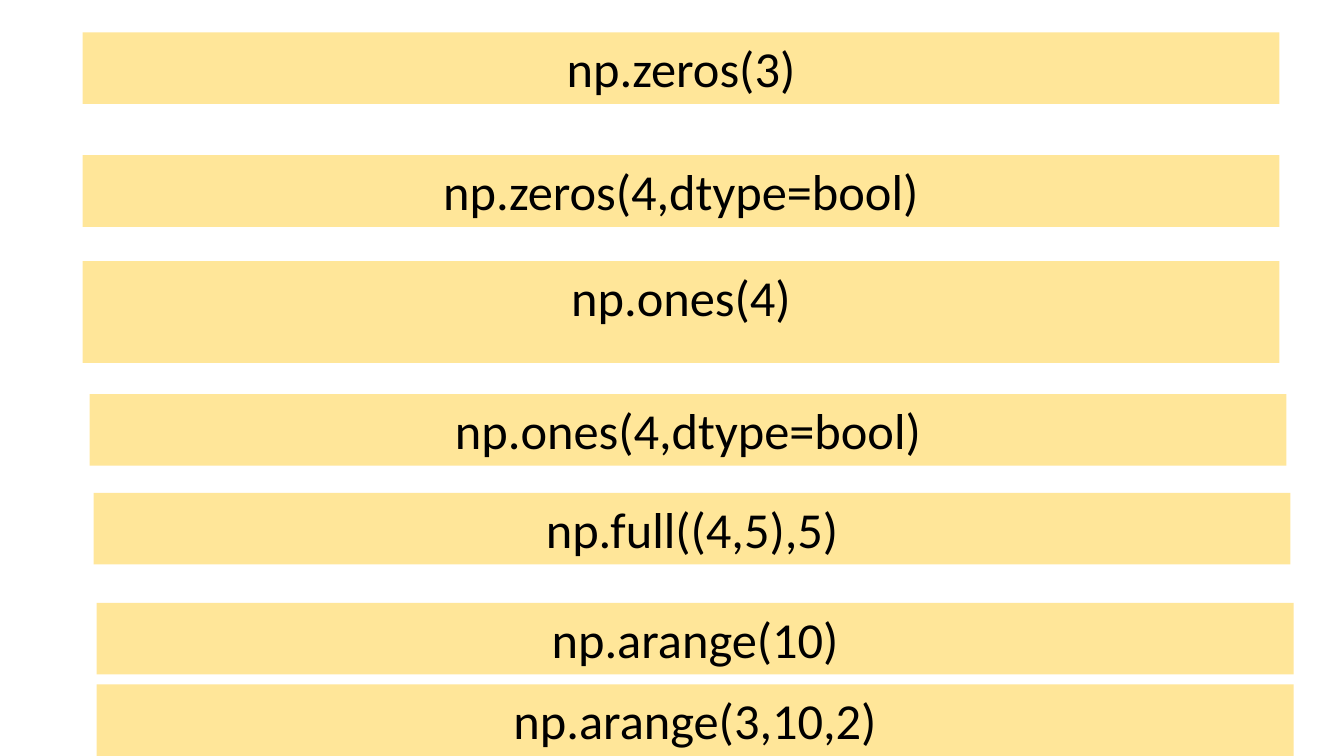
from pptx import Presentation
from pptx.dml.color import RGBColor
from pptx.enum.text import MSO_ANCHOR, MSO_AUTO_SIZE, PP_ALIGN
from pptx.util import Inches, Pt

SLIDE_W, SLIDE_H = 13.33, 7.5
BAR_W, BAR_H, TALL_BAR_H = 11.87, 0.71, 1.01
BAR_FILL, TEXT_COLOUR = "FFE699", "000000"
FRAME_FORMAT = {
    "word_wrap": True,
    "auto_size": MSO_AUTO_SIZE.NONE,
    "vertical_anchor": MSO_ANCHOR.TOP,
}
FONT_FORMAT = {"name": "Calibri", "size": Pt(36)}

NUMPY_CALLS = [
    ("np.zeros(3)", 0.82, 0.32, BAR_H),
    ("np.zeros(4,dtype=bool)", 0.82, 1.54, BAR_H),
    ("np.ones(4)", 0.82, 2.59, TALL_BAR_H),
    ("np.ones(4,dtype=bool)", 0.89, 3.91, BAR_H),
    ("np.full((4,5),5)", 0.93, 4.89, BAR_H),
    ("np.arange(10)", 0.96, 5.98, BAR_H),
    ("np.arange(3,10,2)", 0.96, 6.79, BAR_H),
]


def paint(colour_format, hex_colour):
    """Set a colour from a hex string."""
    colour_format.rgb = RGBColor.from_string(hex_colour)


def apply_format(target, values):
    """Set each named attribute of the target."""
    for name, value in values.items():
        setattr(target, name, value)


def add_code_bar(s, text, left, top, height):
    """Add a filled bar with one centred line of code."""
    sp = s.shapes.add_textbox(
        Inches(left), Inches(top), Inches(BAR_W), Inches(height)
    )
    sp.fill.solid()
    paint(sp.fill.fore_color, BAR_FILL)
    tf = sp.text_frame
    apply_format(tf, FRAME_FORMAT)
    p = tf.paragraphs[0]
    p.alignment = PP_ALIGN.CENTER
    r = p.add_run()
    r.text = text
    apply_format(r.font, FONT_FORMAT)
    paint(r.font.color, TEXT_COLOUR)


def main():
    """Build the slide of array creation calls."""
    prs = Presentation()
    prs.slide_width, prs.slide_height = Inches(SLIDE_W), Inches(SLIDE_H)
    s = prs.slides.add_slide(prs.slide_layouts.get_by_name("Blank"))
    for call in NUMPY_CALLS:
        add_code_bar(s, *call)
    prs.save("out.pptx")


if __name__ == "__main__":
    main()
